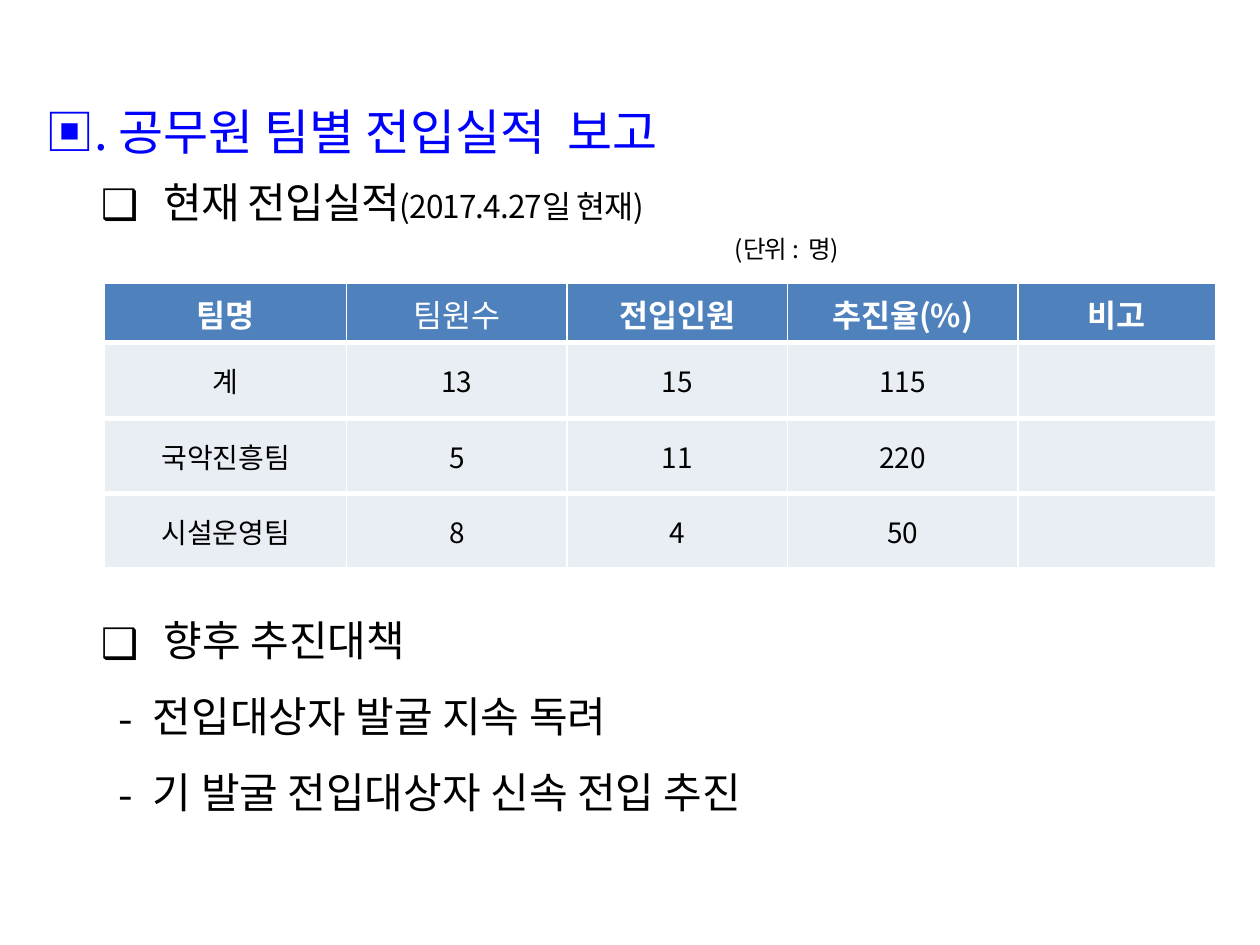
import dataclasses

import lxml.etree
import pptx
import pptx.dml.color
import pptx.enum.text
import pptx.oxml.ns
import pptx.util

Cm = pptx.util.Cm
Pt = pptx.util.Pt
qn = pptx.oxml.ns.qn


@dataclasses.dataclass(frozen=True)
class Theme:
    """Colours, font and type sizes of the report."""
    font: str = "Noto Sans CJK KR"
    heading: str = "0000FF"
    ink: str = "000000"
    paper: str = "FFFFFF"
    header_fill: str = "4F81BD"
    row_fill: str = "E9EDF4"
    heading_size: int = 28
    list_size: int = 24
    detail_size: int = 18
    figure_size: int = 16
    unit_size: int = 14


THEME = Theme()
COLUMN_WIDTHS = (4.88, 4.44, 4.44, 4.65, 3.99)
ROW_HEIGHTS = (1.19, 1.52, 1.52, 1.52)
RESULTS = (
    ("팀명", "팀원수", "전입인원", "추진율(%)", "비고"),
    ("계", "13", "15", "115", ""),
    ("국악진흥팀", "5", "11", "220", ""),
    ("시설운영팀", "8", "4", "50", ""),
)
MEASURES = ("전입대상자 발굴 지속 독려", "기 발굴 전입대상자 신속 전입 추진")


def rgb(value):
    """Return the colour for a hex value."""
    return pptx.dml.color.RGBColor.from_string(value)


def add_text(paragraph, text, *, size, color=THEME.ink, bold=False, tracking=None):
    """Append a formatted run to a paragraph."""
    run = paragraph.add_run()
    run.text = text
    run.font.size = Pt(size)
    run.font.bold = bold
    run.font.color.rgb = rgb(color)
    run.font.name = THEME.font
    properties = run.font._element
    east_asian = lxml.etree.Element(qn("a:ea"), typeface=THEME.font)
    properties.find(qn("a:latin")).addnext(east_asian)
    if tracking is not None:
        properties.set("spc", str(int(tracking * 100)))


def format_paragraph(paragraph, *, line, left, hanging=0, bullet=None, level=0):
    """Set line height, indents and bullet of a paragraph."""
    paragraph.level = level
    paragraph.alignment = pptx.enum.text.PP_ALIGN.LEFT
    paragraph.line_spacing = Pt(line)
    paragraph.space_before = Pt(0)
    properties = paragraph._p.get_or_add_pPr()
    properties.set("marL", str(Cm(left)))
    properties.set("indent", str(-Cm(hanging)))
    if bullet is None:
        lxml.etree.SubElement(properties, qn("a:buNone"))
        return
    bullet_color = lxml.etree.SubElement(properties, qn("a:buClr"))
    lxml.etree.SubElement(bullet_color, qn("a:srgbClr"), val=THEME.ink)
    lxml.etree.SubElement(properties, qn("a:buFont"), typeface=THEME.font)
    lxml.etree.SubElement(properties, qn("a:buChar"), char=bullet)


def place_frame(placeholder, box):
    """Move a placeholder into a box and return its text frame."""
    placeholder.left, placeholder.top, placeholder.width, placeholder.height = map(Cm, box)
    frame = placeholder.text_frame
    frame.word_wrap = True
    frame.auto_size = pptx.enum.text.MSO_AUTO_SIZE.NONE
    frame.vertical_anchor = pptx.enum.text.MSO_ANCHOR.TOP
    return frame


def fill_heading(placeholder, box):
    """Write the report heading."""
    heading = place_frame(placeholder, box).paragraphs[0]
    format_paragraph(heading, line=45, left=1.42, hanging=1.27)
    add_text(heading, "▣. 공무원 팀별 전입실적  보고",
             size=THEME.heading_size, color=THEME.heading)


def fill_status(placeholder, box):
    """Write the current status line and the unit note."""
    frame = place_frame(placeholder, box)
    status = frame.paragraphs[0]
    format_paragraph(status, line=38, left=2.54, hanging=1.27, bullet="❑", level=1)
    add_text(status, "현재 전입실적", size=THEME.list_size, tracking=-0.5)
    add_text(status, "(2017.4.27일 현재)", size=THEME.detail_size, tracking=-0.5)
    unit = frame.add_paragraph()
    format_paragraph(unit, line=21, left=14.05, level=1)
    add_text(unit, "(단위 :  명)", size=THEME.unit_size, tracking=-0.5)


def fill_measures(placeholder, box):
    """Write the list of future measures."""
    frame = place_frame(placeholder, box)
    topic = frame.paragraphs[0]
    format_paragraph(topic, line=43.4, left=2.54, hanging=1.27, bullet="❑", level=1)
    add_text(topic, "향후 추진대책", size=THEME.list_size)
    for measure in MEASURES:
        item = frame.add_paragraph()
        format_paragraph(item, line=43.4, left=2.32, hanging=0.7, bullet="-", level=1)
        add_text(item, measure, size=THEME.list_size)


def style_cell(cell, fill, top_width):
    """Fill a cell and draw its borders."""
    cell.vertical_anchor = pptx.enum.text.MSO_ANCHOR.MIDDLE
    cell.fill.solid()
    cell.fill.fore_color.rgb = rgb(fill)
    properties = cell._tc.get_or_add_tcPr()
    borders = (("a:lnL", 1), ("a:lnR", 1), ("a:lnT", top_width), ("a:lnB", 3))
    for position, (side, width) in enumerate(borders):
        border = lxml.etree.Element(qn(side), w=str(Pt(width)))
        border_fill = lxml.etree.SubElement(border, qn("a:solidFill"))
        lxml.etree.SubElement(border_fill, qn("a:srgbClr"), val=THEME.paper)
        properties.insert(position, border)


def add_results(slide, box):
    """Add the table of results by team."""
    results = slide.shapes.add_table(len(RESULTS), len(COLUMN_WIDTHS), *map(Cm, box)).table
    for column, width in zip(results.columns, COLUMN_WIDTHS):
        column.width = Cm(width)
    for row, height in zip(results.rows, ROW_HEIGHTS):
        row.height = Cm(height)
    for row_index, entries in enumerate(RESULTS):
        header = row_index == 0
        for column_index, entry in enumerate(entries):
            cell = results.cell(row_index, column_index)
            style_cell(cell, THEME.header_fill if header else THEME.row_fill,
                       1 if header else 3)
            if not entry:
                continue
            paragraph = cell.text_frame.paragraphs[0]
            paragraph.alignment = pptx.enum.text.PP_ALIGN.CENTER
            add_text(paragraph, entry,
                     size=THEME.detail_size if header else THEME.figure_size,
                     color=THEME.paper if header else THEME.ink,
                     bold=header and entry != "팀원수")


def main():
    """Build the report slide and save it."""
    presentation = pptx.Presentation()
    presentation.slide_width, presentation.slide_height = Cm(25.4), Cm(19.05)
    slide = presentation.slides.add_slide(presentation.slide_layouts[3])
    left, width = 0.51, 24.89
    fill_heading(slide.shapes.title, (left, 1.52, width, 1.8))
    fill_status(slide.placeholders[1], (left, 3.1, width, 2.4))
    add_results(slide, (2.11, 5.72, sum(COLUMN_WIDTHS), sum(ROW_HEIGHTS)))
    fill_measures(slide.placeholders[2], (left, 11.75, width, 5.4))
    presentation.save("out.pptx")


if __name__ == "__main__":
    main()
